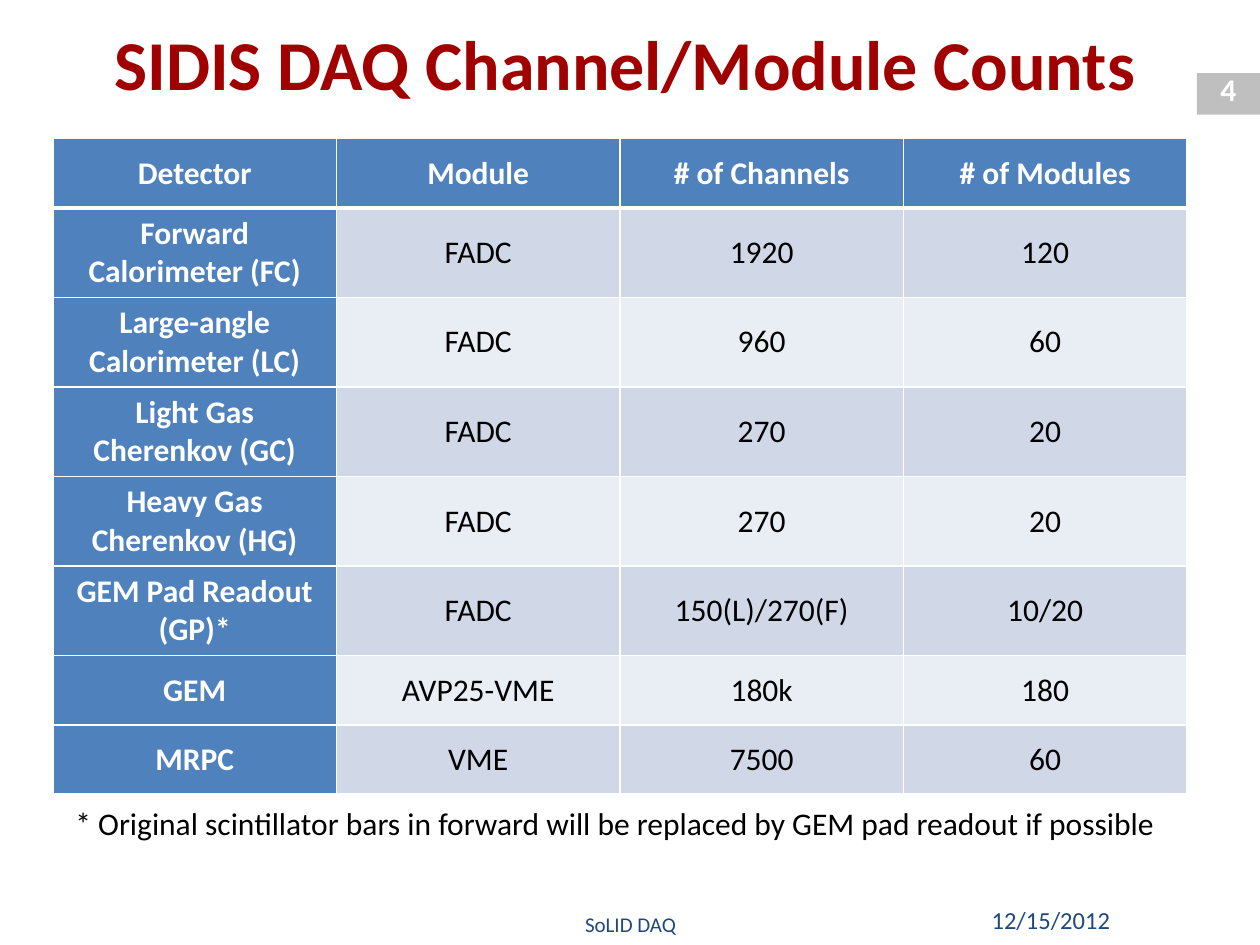
"""Build the SIDIS DAQ channel and module counts slide."""
from lxml import etree
from pptx import Presentation
from pptx.dml.color import RGBColor
from pptx.enum import shapes, text
from pptx.oxml.ns import qn
from pptx.util import Inches, Pt

COLORS = {"title": "A00000", "head": "4F81BD", "odd": "D0D8E8", "even": "E9EDF4",
          "white": "FFFFFF", "black": "000000", "footer": "1F497D", "tab": "BFBFBF"}
FONT = "Calibri"
TOP, MID = text.MSO_ANCHOR.TOP, text.MSO_ANCHOR.MIDDLE
LEFT, CENTER, RIGHT = text.PP_ALIGN.LEFT, text.PP_ALIGN.CENTER, text.PP_ALIGN.RIGHT

ROWS = [
    ("Detector", "Module", "# of Channels", "# of Modules"),
    ("Forward Calorimeter (FC)", "FADC", "1920", "120"),
    ("Large-angle Calorimeter (LC)", "FADC", "960", "60"),
    ("Light Gas Cherenkov (GC)", "FADC", "270", "20"),
    ("Heavy Gas Cherenkov (HG)", "FADC", "270", "20"),
    ("GEM Pad Readout (GP)*", "FADC", "150(L)/270(F)", "10/20"),
    ("GEM", "AVP25-VME", "180k", "180"),
    ("MRPC", "VME", "7500", "60"),
]
ROW_HEIGHTS = [0.55] + [0.65] * 5 + [0.55] * 2
COL_WIDTH = 2.25
TABLE_LEFT, TABLE_TOP = 0.42, 1.1

TEXTS = [
    ("4", (9.5, 0.51, 0.5, 0.4), 18, "white", True, CENTER, TOP, True),
    ("SIDIS DAQ Channel/Module Counts", (0.42, 0.08, 9.08, 0.83), 40, "title", True, CENTER, MID, True),
    ("12/15/2012", (7.58, 7.1, 1.33, 0.4), 14, "footer", False, RIGHT, MID, True),
    ("SoLID DAQ", (2.42, 7.17, 5.17, 0.33), 12, "footer", False, CENTER, MID, True),
    ("* Original scintillator bars in forward will be replaced by GEM pad readout if possible",
     (0.5, 6.33, 8.81, 0.4), 18, "black", False, LEFT, TOP, False),
]


def rgb(name):
    return RGBColor.from_string(COLORS[name])


def write(tf, words, size, color, bold, align):
    p = tf.paragraphs[0]
    p.text = words
    p.alignment = align
    p.font.name, p.font.size, p.font.bold = FONT, Pt(size), bold
    p.font.color.rgb = rgb(color)


def add_text(s, words, box, size, color, bold, align, anchor, wrap):
    tf = s.shapes.add_textbox(*map(Inches, box)).text_frame
    tf.word_wrap = wrap
    tf.vertical_anchor = anchor
    write(tf, words, size, color, bold, align)


def set_borders(cell, widths):
    tc_pr = cell._tc.get_or_add_tcPr()
    for i, (side, width) in enumerate(widths.items()):
        ln = etree.Element(qn(f"a:ln{side}"), w=str(Pt(width)))
        fill = etree.SubElement(ln, qn("a:solidFill"))
        etree.SubElement(fill, qn("a:srgbClr"), val=COLORS["white"])
        tc_pr.insert(i, ln)


def add_counts_table(s):
    n_cols = len(ROWS[0])
    table = s.shapes.add_table(
        len(ROWS), n_cols, Inches(TABLE_LEFT), Inches(TABLE_TOP),
        Inches(COL_WIDTH * n_cols), Inches(sum(ROW_HEIGHTS))).table
    table.first_col = True
    for col in table.columns:
        col.width = Inches(COL_WIDTH)
    for i, (values, height) in enumerate(zip(ROWS, ROW_HEIGHTS)):
        table.rows[i].height = Inches(height)
        for j, value in enumerate(values):
            cell = table.cell(i, j)
            header = i == 0 or j == 0
            cell.vertical_anchor = MID
            cell.fill.solid()
            cell.fill.fore_color.rgb = rgb("head" if header else "odd" if i % 2 else "even")
            write(cell.text_frame, value, 18, "white" if header else "black", header, CENTER)
            set_borders(cell, {"L": 1, "R": 1, "T": 3 if i == 1 else 1, "B": 3 if i == 0 else 1})


def main():
    prs = Presentation()
    prs.slide_width, prs.slide_height = Inches(10), Inches(7.5)
    s = prs.slides.add_slide(prs.slide_layouts[6])
    tab = s.shapes.add_shape(shapes.MSO_SHAPE.RECTANGLE, *map(Inches, (9.5, 0.58, 0.5, 0.33)))
    tab.shadow.inherit = False
    tab.fill.solid()
    tab.fill.fore_color.rgb = rgb("tab")
    tab.line.fill.background()
    add_counts_table(s)
    for item in TEXTS:
        add_text(s, *item)
    prs.save("out.pptx")


if __name__ == "__main__":
    main()
